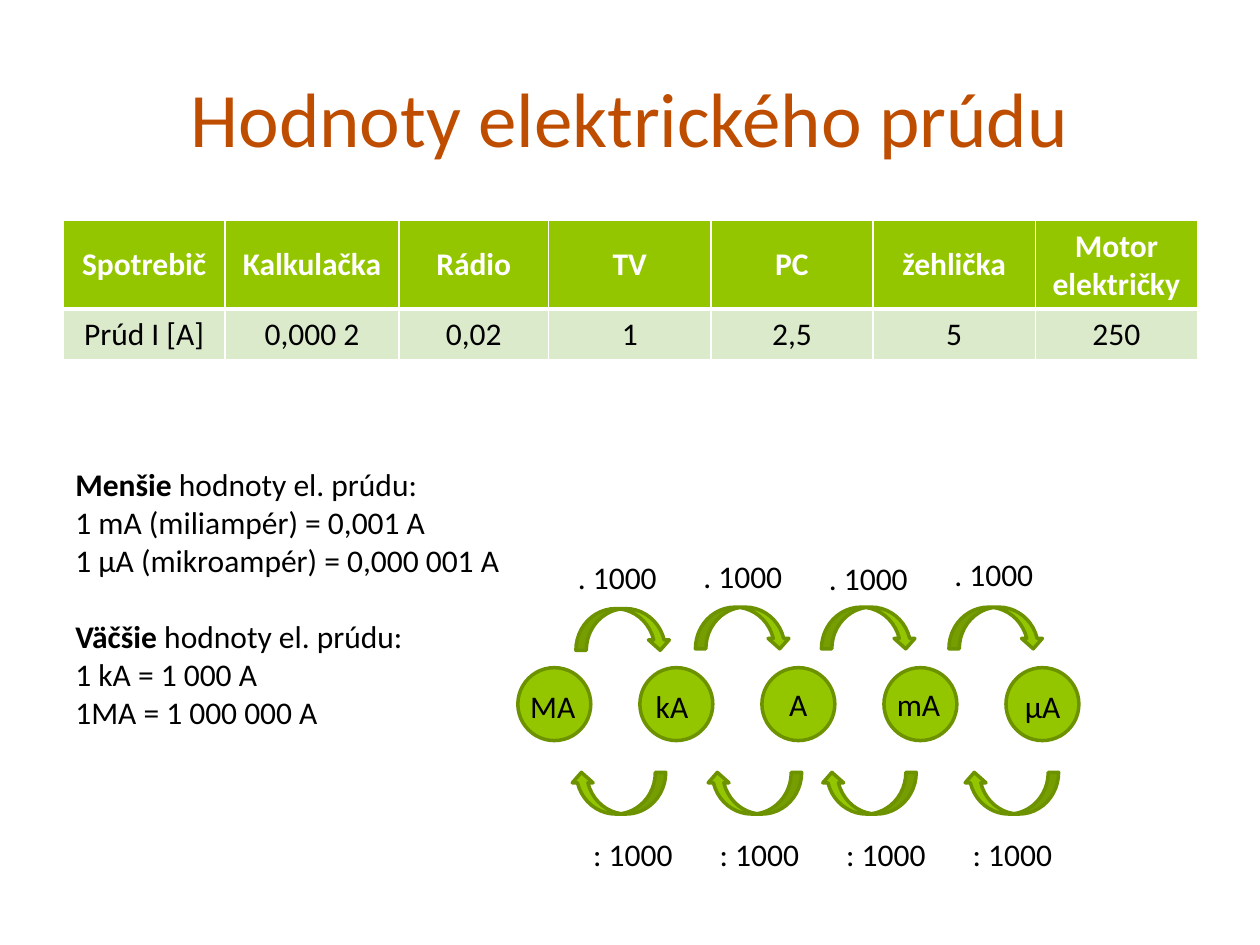
from lxml import etree
from pptx import Presentation
from pptx.dml.color import RGBColor
from pptx.enum.shapes import MSO_SHAPE
from pptx.enum.text import MSO_ANCHOR, MSO_AUTO_SIZE, PP_ALIGN
from pptx.oxml.ns import qn
from pptx.util import Cm, Pt

OVAL = MSO_SHAPE.OVAL
CURVED_ARROW = MSO_SHAPE.CURVED_DOWN_ARROW
MIDDLE = MSO_ANCHOR.MIDDLE
TOP = MSO_ANCHOR.TOP
GROW = MSO_AUTO_SIZE.SHAPE_TO_FIT_TEXT
LEFT = PP_ALIGN.LEFT
CENTER = PP_ALIGN.CENTER

GREEN = "94C600"
DARK_GREEN = "6D9200"
PALE_GREEN = "DCEACC"
ORANGE = "BF4D00"
WHITE = "FFFFFF"
BLACK = "000000"


def color(value):
    return RGBColor.from_string(value)


class SlideBuilder:
    font = "Calibri"
    size = 18

    def __init__(self, slide):
        self.slide = slide

    def style(self, para, size=size, ink=BLACK, bold=False, align=LEFT):
        para.alignment = align
        for span in para.runs:
            span.font.name = self.font
            span.font.size = Pt(size)
            span.font.bold = bold
            span.font.color.rgb = color(ink)

    def text(self, words, left, top, width, height, anchor=TOP, wrap=True, **style):
        box = self.slide.shapes.add_textbox(Cm(left), Cm(top), Cm(width), Cm(height))
        frame = box.text_frame
        frame.word_wrap = wrap
        frame.vertical_anchor = anchor
        if anchor == TOP:
            frame.auto_size = GROW
        frame.text = words
        for para in frame.paragraphs:
            self.style(para, **style)
        return frame

    def shape(self, kind, left, top, width, height, words="", rotation=0):
        shape = self.slide.shapes.add_shape(kind, Cm(left), Cm(top), Cm(width), Cm(height))
        shape.shadow.inherit = False
        shape.rotation = rotation
        shape.fill.solid()
        shape.fill.fore_color.rgb = color(GREEN)
        shape.line.color.rgb = color(DARK_GREEN)
        shape.line.width = Pt(2)
        if words:
            shape.text_frame.text = words
            shape.text_frame.vertical_anchor = MIDDLE
            self.style(shape.text_frame.paragraphs[0], align=CENTER)

    def borders(self, cell, **widths):
        properties = cell._tc.get_or_add_tcPr()
        for index, side in enumerate("LRTB"):
            line = etree.Element(qn(f"a:ln{side}"), w=str(Pt(widths.get(side, 1))))
            fill = etree.SubElement(line, qn("a:solidFill"))
            etree.SubElement(fill, qn("a:srgbClr"), val=WHITE)
            properties.insert(index, line)

    def table(self, rows, left, top, widths, heights):
        frame = self.slide.shapes.add_table(
            len(rows), len(widths), Cm(left), Cm(top), Cm(sum(widths)), Cm(sum(heights)))
        table = frame.table
        for column, width in zip(table.columns, widths):
            column.width = Cm(width)
        for row, height in zip(table.rows, heights):
            row.height = Cm(height)
        for row_index, row in enumerate(rows):
            header = row_index == 0
            for column_index, words in enumerate(row):
                cell = table.cell(row_index, column_index)
                cell.text = words
                cell.vertical_anchor = MIDDLE
                cell.fill.solid()
                cell.fill.fore_color.rgb = color(GREEN if header else PALE_GREEN)
                self.style(cell.text_frame.paragraphs[0], ink=WHITE if header else BLACK,
                           bold=header, align=CENTER)
                self.borders(cell, **({"B": 3} if header else {"T": 3}))

    def value_list(self, lines, left, top, width, height):
        frame = self.text("\n".join(lines), left, top, width, height, wrap=False)
        for index, para in enumerate(frame.paragraphs):
            first, space, rest = para.text.partition(" ")
            if rest.startswith("hodnoty"):
                para.text = first
                para.add_run().text = space + rest
                self.style(para)
                para.runs[0].font.bold = True
                if index:
                    para.space_before = Pt(22)


def main():
    deck = Presentation()
    deck.slide_width, deck.slide_height = Cm(25.4), Cm(19.05)
    page = SlideBuilder(deck.slides.add_slide(deck.slide_layouts[6]))

    page.text("Hodnoty elektrického prúdu", 1.27, 0.76, 22.86, 3.18,
              anchor=MIDDLE, size=44, ink=ORANGE, align=CENTER)
    page.table(
        [["Spotrebič", "Kalkulačka", "Rádio", "TV", "PC", "žehlička", "Motor električky"],
         ["Prúd I [A]", "0,000 2", "0,02", "1", "2,5", "5", "250"]],
        1.27, 4.45, [3.27, 3.5, 3.02] + [3.27] * 4, [1.78, 1.03])
    page.value_list(
        ["Menšie hodnoty el. prúdu:",
         "1 mA (miliampér) = 0,001 A",
         "1 μA (mikroampér) = 0,000 001 A",
         "Väčšie hodnoty el. prúdu:",
         "1 kA = 1 000 A",
         "1MA = 1 000 000 A"],
        1.27, 9.25, 9.17, 5.64)

    for index in range(5):
        page.shape(OVAL, 10.44 + 2.46 * index, 13.46, 1.47, 1.47, "A" if index == 2 else "")
    for unit, left, top in [("MA", 10.44, 13.72), ("kA", 12.97, 13.72),
                            ("mA", 17.83, 13.69), ("μA", 20.41, 13.72)]:
        page.text(unit, left, top, 1.55, 1.02)

    for left, top in [(11.61, 12.27), (14.02, 12.24), (16.56, 12.24), (19.13, 12.24)]:
        page.shape(CURVED_ARROW, left, top, 1.91, 0.84)
    for left in [11.51, 14.25, 16.56, 19.43]:
        page.shape(CURVED_ARROW, left, 15.57, 1.91, 0.84, rotation=180)
    for index, top in enumerate([11.13, 11.11, 11.15, 11.07]):
        page.text(". 1000", 11.4 + 2.53 * index, top, 2.11, 1.02)
        page.text(": 1000", 11.71 + 2.55 * index, 16.71, 2.11, 1.02)

    deck.save("out.pptx")


if __name__ == "__main__":
    main()
